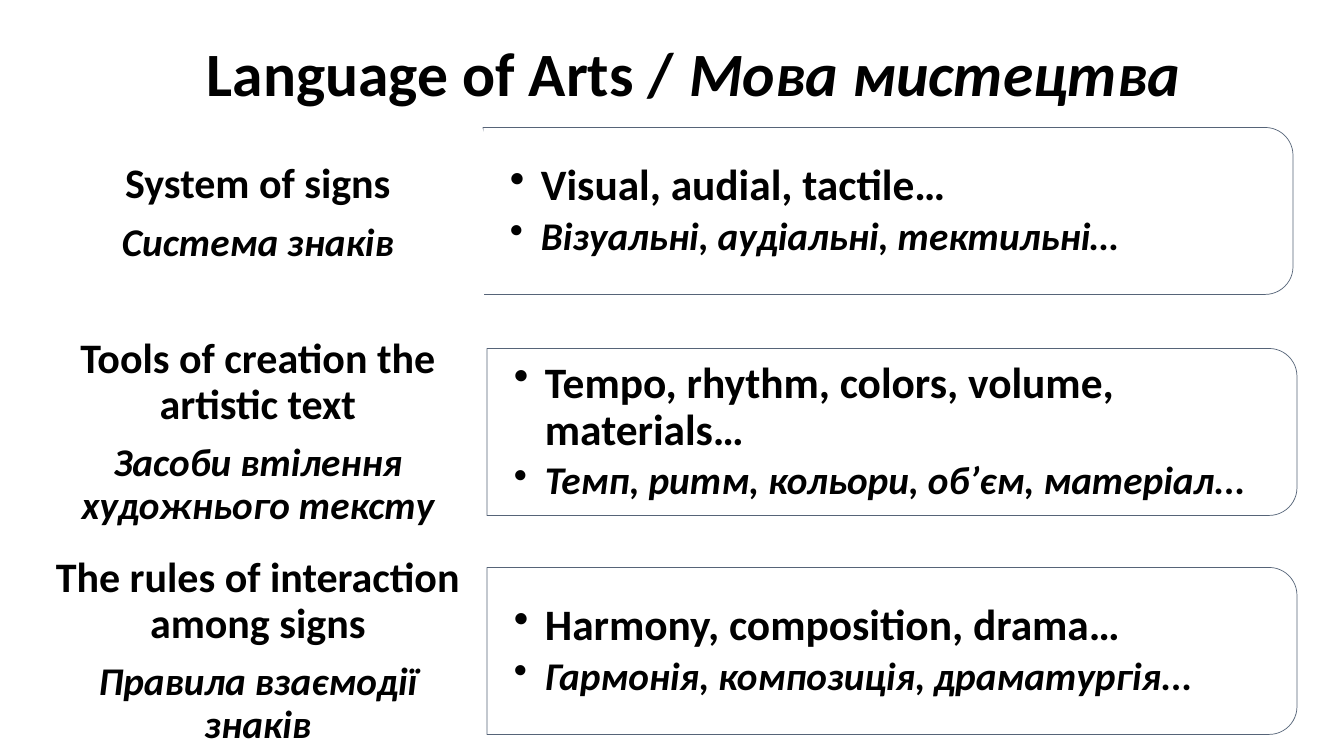
"""Build the slide on the language of arts: three bilingual labels with example panels."""
from lxml import etree
from pptx import Presentation
from pptx import util as u
from pptx.dml.color import RGBColor
from pptx.enum import shapes, text
from pptx.oxml.ns import qn

TITLE = ("Language of Arts / ", "Мова мистецтва")
ROWS = [
    {"label": ("System of signs", "Система знаків"),
     "examples": ("Visual, audial, tactile…", "Візуальні, аудіальні, тектильні…"),
     "panel": (483, 211)},
    {"label": ("Tools of creation the artistic text", "Засоби втілення художнього тексту"),
     "examples": ("Tempo, rhythm, colors, volume, materials…",
                  "Темп, ритм, кольори, об’єм, матеріал..."),
     "panel": (487, 432)},
    {"label": ("The rules of interaction among signs", "Правила взаємодії знаків"),
     "examples": ("Harmony, composition, drama…", "Гармонія, композиція, драматургія..."),
     "panel": (487, 651)},
]
COLORS = {"paper": "FFFFFF", "ink": "000000", "outline": "44546A"}
FONT = "Calibri"
PX = 914400 / 100.8
LABEL_LEFT, LABEL_TOP, LABEL_WIDTH, LABEL_HEIGHT, ROW_PITCH = 30, 109, 456, 209, 219
PANEL_LENGTH, PANEL_DEPTH = 810, 167
EXAMPLES_WIDTH, EXAMPLES_HEIGHT = 802, 150
BULLET_INDENT = 31


def px(value):
    return u.Emu(round(value * PX))


def color(name):
    return RGBColor.from_string(COLORS[name])


def style(span, size, italic):
    span.font.name = FONT
    span.font.size = u.Pt(size)
    span.font.bold = True
    span.font.italic = italic
    span.font.color.rgb = color("ink")


def set_frame(frame, side, end):
    frame.word_wrap = True
    frame.auto_size = text.MSO_AUTO_SIZE.NONE
    frame.vertical_anchor = text.MSO_ANCHOR.MIDDLE
    frame.margin_left = frame.margin_right = px(side)
    frame.margin_top = frame.margin_bottom = px(end)


def write_pair(frame, pair, sizes, gap, bulleted=False):
    frame.text = "\n".join(pair)
    for index, para in enumerate(frame.paragraphs):
        para.line_spacing = 0.9
        para.alignment = text.PP_ALIGN.LEFT if bulleted else text.PP_ALIGN.CENTER
        style(para.runs[0], sizes[index], index == 1)
        props = para._p.get_or_add_pPr()
        after = etree.SubElement(props, qn("a:spcAft"))
        etree.SubElement(after, qn("a:spcPct")).set("val", str(gap * 1000))
        if bulleted:
            para.level = 1
            props.set("marL", str(px(BULLET_INDENT)))
            props.set("indent", str(-px(BULLET_INDENT)))
            etree.SubElement(props, qn("a:buChar")).set("char", "•")


def add_panel(page, left, middle):
    box = page.shapes.add_shape(
        shapes.MSO_SHAPE.ROUND_2_SAME_RECTANGLE,
        px(left + (PANEL_LENGTH - PANEL_DEPTH) / 2), px(middle - PANEL_LENGTH / 2),
        px(PANEL_DEPTH), px(PANEL_LENGTH))
    box.rotation = 90
    box.shadow.inherit = False
    box.fill.solid()
    box.fill.fore_color.rgb = color("paper")
    box.line.color.rgb = color("outline")
    box.line.width = u.Pt(0.5)
    for tint in box._element.spPr.iter(qn("a:srgbClr")):
        etree.SubElement(tint, qn("a:alpha")).set("val", "90000")


def add_examples(page, left, middle, pair):
    box = page.shapes.add_textbox(px(left), px(middle - EXAMPLES_HEIGHT / 2),
                                  px(EXAMPLES_WIDTH), px(EXAMPLES_HEIGHT))
    set_frame(box.text_frame, 27, 14)
    write_pair(box.text_frame, pair, (31, 28), 15, bulleted=True)


def add_label(page, top, pair):
    box = page.shapes.add_shape(shapes.MSO_SHAPE.ROUNDED_RECTANGLE, px(LABEL_LEFT), px(top),
                                px(LABEL_WIDTH), px(LABEL_HEIGHT))
    box.shadow.inherit = False
    box.fill.solid()
    box.fill.fore_color.rgb = color("paper")
    box.line.fill.background()
    set_frame(box.text_frame, 12, 6)
    write_pair(box.text_frame, pair, (30, 28), 35)


def add_title(page):
    title = page.shapes.title
    title.left, title.top, title.width, title.height = px(110), px(25), px(1168), px(103)
    set_frame(title.text_frame, 10, 5)
    para = title.text_frame.paragraphs[0]
    para.alignment = text.PP_ALIGN.CENTER
    para.line_spacing = 0.9
    for index, words in enumerate(TITLE):
        span = para.add_run()
        span.text = words
        style(span, 44, index == 1)


def main():
    deck = Presentation()
    deck.slide_width, deck.slide_height = px(1344), px(756)
    page = deck.slides.add_slide(deck.slide_layouts[5])
    add_title(page)
    for index, row in enumerate(ROWS):
        left, middle = row["panel"]
        add_panel(page, left, middle)
        add_examples(page, left, middle, row["examples"])
        add_label(page, LABEL_TOP + index * ROW_PITCH, row["label"])
    deck.save("out.pptx")


if __name__ == "__main__":
    main()
